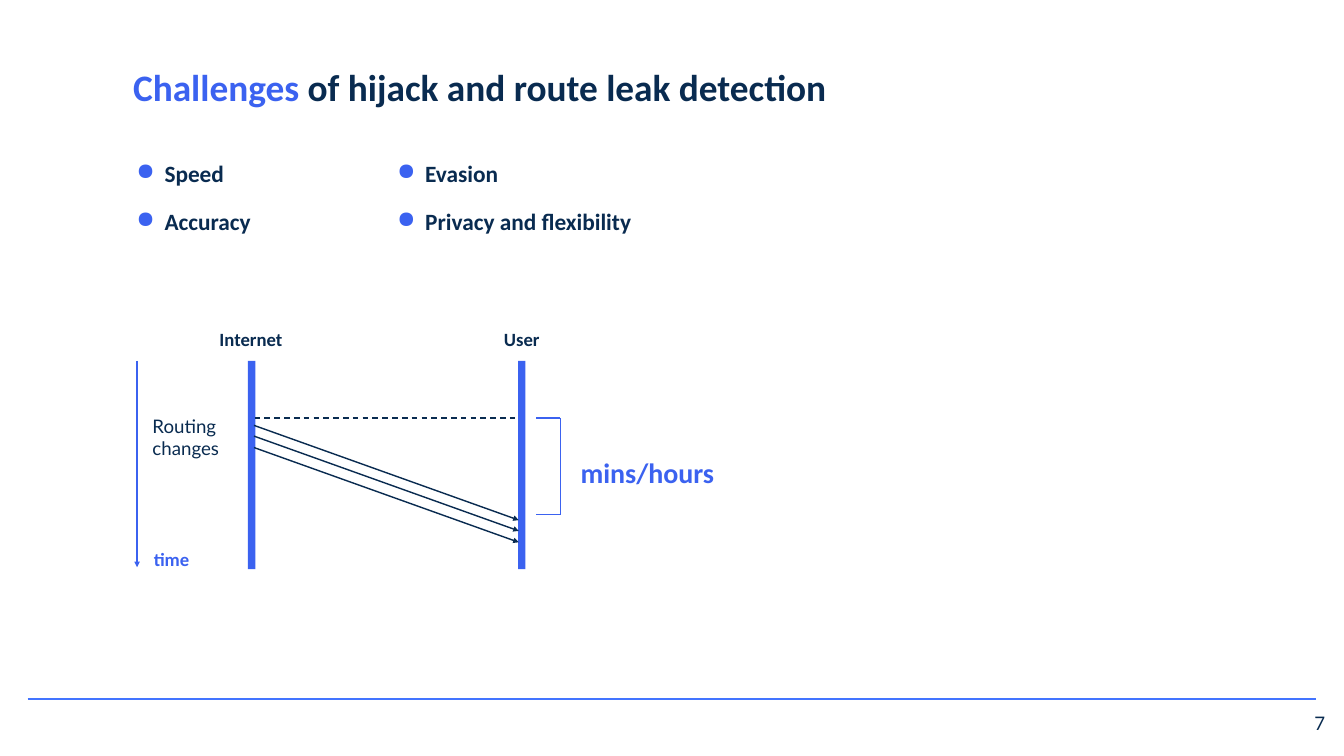
from dataclasses import dataclass

import pptx
import pptx.dml.color
import pptx.enum.dml
import pptx.enum.shapes
import pptx.enum.text
import pptx.oxml.ns
import pptx.oxml.xmlchemy
import pptx.util

Inches = pptx.util.Inches
Pt = pptx.util.Pt
RGBColor = pptx.dml.color.RGBColor
PP_ALIGN = pptx.enum.text.PP_ALIGN
OxmlElement = pptx.oxml.xmlchemy.OxmlElement
qn = pptx.oxml.ns.qn

BLUE = RGBColor(0x3B, 0x62, 0xF0)
RULE_BLUE = RGBColor(0x43, 0x74, 0xFF)
NAVY = RGBColor(0x09, 0x2B, 0x50)

AXIS_TOP, AXIS_HEIGHT, AXIS_WIDTH = 5.37, 3.1, 0.11
INTERNET_X, USER_X = 3.69, 7.71
CHANGE_Y = 6.22
BRACKET_LEFT, BRACKET_RIGHT, BRACKET_BOTTOM = 7.98, 8.34, 7.66


@dataclass
class Label:
    text: str
    left: float
    top: float
    width: float
    height: float
    size: int = 20
    color: RGBColor = NAVY
    font: str = "Calibri"
    bold: bool = True
    align: PP_ALIGN = PP_ALIGN.LEFT
    spacing: float = 1.25
    inset: float = 0.1


@dataclass
class Line:
    x1: float
    y1: float
    x2: float
    y2: float
    color: RGBColor = BLUE
    arrow: bool = False
    dashed: bool = False


LABELS = [
    Label("Internet", 2.95, 4.7, 1.57, 0.54, align=PP_ALIGN.CENTER),
    Label("User", 7.23, 4.7, 1.07, 0.54, align=PP_ALIGN.CENTER),
    Label("Routing\nchanges", 2.17, 6.07, 1.35, 0.88, font="Lato", bold=False, spacing=1.0),
    Label("time", 2.19, 7.97, 0.97, 0.54, color=BLUE),
    Label("mins/hours", 8.54, 6.56, 2.52, 0.71, size=30, color=BLUE),
    Label("7", 18.72, 10.39, 1.2, 0.86, font="Lato", bold=False,
          align=PP_ALIGN.RIGHT, spacing=1.0, inset=0.2),
]

LINES = [
    Line(0.41, 10.4, 19.59, 10.4, RULE_BLUE),
    Line(2.04, AXIS_TOP, 2.04, 8.44, arrow=True),
    Line(3.79, CHANGE_Y, 7.73, CHANGE_Y, NAVY, dashed=True),
    *[Line(3.78, y, 7.72, y + 1.41, NAVY, arrow=True) for y in (6.33, 6.49, 6.66)],
    Line(BRACKET_LEFT, CHANGE_Y, BRACKET_RIGHT, CHANGE_Y),
    Line(BRACKET_LEFT, BRACKET_BOTTOM, BRACKET_RIGHT, BRACKET_BOTTOM),
    Line(BRACKET_RIGHT, CHANGE_Y, BRACKET_RIGHT, BRACKET_BOTTOM),
]


def set_frame(tf, inset: float) -> None:
    tf.word_wrap = True
    tf.auto_size = pptx.enum.text.MSO_AUTO_SIZE.NONE
    tf.margin_left = tf.margin_right = Inches(inset)
    tf.margin_top = tf.margin_bottom = Inches(inset)


def set_font(r, size: int, color: RGBColor, font: str = "Calibri", bold: bool = True) -> None:
    r.font.size = Pt(size)
    r.font.name = font
    r.font.bold = bold
    r.font.color.rgb = color


def add_title(slide) -> None:
    sp = slide.shapes.title
    sp.left, sp.top, sp.width, sp.height = map(Inches, (1.88, 0.86, 16.18, 0.88))
    tf = sp.text_frame
    set_frame(tf, 0.1)
    tf.vertical_anchor = pptx.enum.text.MSO_ANCHOR.TOP
    p = tf.paragraphs[0]
    p.alignment = PP_ALIGN.LEFT
    for text, color in (("Challenges", BLUE), (" of hijack and route leak detection", NAVY)):
        r = p.add_run()
        r.text = text
        set_font(r, 40, color)


def add_label(slide, label: Label) -> None:
    box = (label.left, label.top, label.width, label.height)
    tf = slide.shapes.add_textbox(*map(Inches, box)).text_frame
    set_frame(tf, label.inset)
    tf.text = label.text
    for p in tf.paragraphs:
        p.alignment = label.align
        p.line_spacing = label.spacing
        set_font(p.runs[0], label.size, label.color, label.font, label.bold)


def add_bullet(p) -> None:
    pPr = p._p.get_or_add_pPr()
    pPr.set("marL", str(Inches(0.5)))
    pPr.set("indent", str(Inches(-0.42)))
    color = OxmlElement("a:buClr")
    rgb = OxmlElement("a:srgbClr")
    rgb.set("val", str(BLUE))
    color.append(rgb)
    char = OxmlElement("a:buChar")
    char.set("char", "●")
    pPr.extend([color, char])


def add_bullets(slide, items: list[str], left: float, width: float) -> None:
    sp = slide.shapes.add_textbox(Inches(left), Inches(2.33), Inches(width), Inches(1.82))
    tf = sp.text_frame
    set_frame(tf, 0.1)
    tf.text = "\n".join(items)
    for i, p in enumerate(tf.paragraphs):
        add_bullet(p)
        p.line_spacing = 0.85
        if i:
            p.space_before = Pt(26)
        set_font(p.runs[0], 25, NAVY)


def add_axis(slide, left: float) -> None:
    """Draw the vertical time bar of one party."""
    sp = slide.shapes.add_shape(
        pptx.enum.shapes.MSO_SHAPE.RECTANGLE,
        Inches(left), Inches(AXIS_TOP), Inches(AXIS_WIDTH), Inches(AXIS_HEIGHT))
    sp.shadow.inherit = False
    sp.fill.solid()
    sp.fill.fore_color.rgb = BLUE
    sp.line.fill.background()


def add_line(slide, line: Line) -> None:
    ends = (line.x1, line.y1, line.x2, line.y2)
    sp = slide.shapes.add_connector(
        pptx.enum.shapes.MSO_CONNECTOR.STRAIGHT, *map(Inches, ends))
    sp.line.color.rgb = line.color
    sp.line.width = Pt(1.5)
    if line.dashed:
        sp.line.dash_style = pptx.enum.dml.MSO_LINE.DASH
    spPr = sp._element.find(qn("p:spPr"))
    if line.arrow:
        tail = OxmlElement("a:tailEnd")
        tail.set("type", "triangle")
        spPr.find(qn("a:ln")).append(tail)
    spPr.append(OxmlElement("a:effectLst"))


def main() -> None:
    prs = pptx.Presentation()
    prs.slide_width, prs.slide_height = Inches(20), Inches(11.25)
    slide = prs.slides.add_slide(prs.slide_layouts.get_by_name("Title Only"))
    add_title(slide)
    add_bullets(slide, ["Speed", "Accuracy"], 1.85, 2.45)
    add_bullets(slide, ["Evasion", "Privacy and flexibility"], 5.73, 4.43)
    for left in (INTERNET_X, USER_X):
        add_axis(slide, left)
    for line in LINES:
        add_line(slide, line)
    for label in LABELS:
        add_label(slide, label)
    prs.save("out.pptx")


if __name__ == "__main__":
    main()
